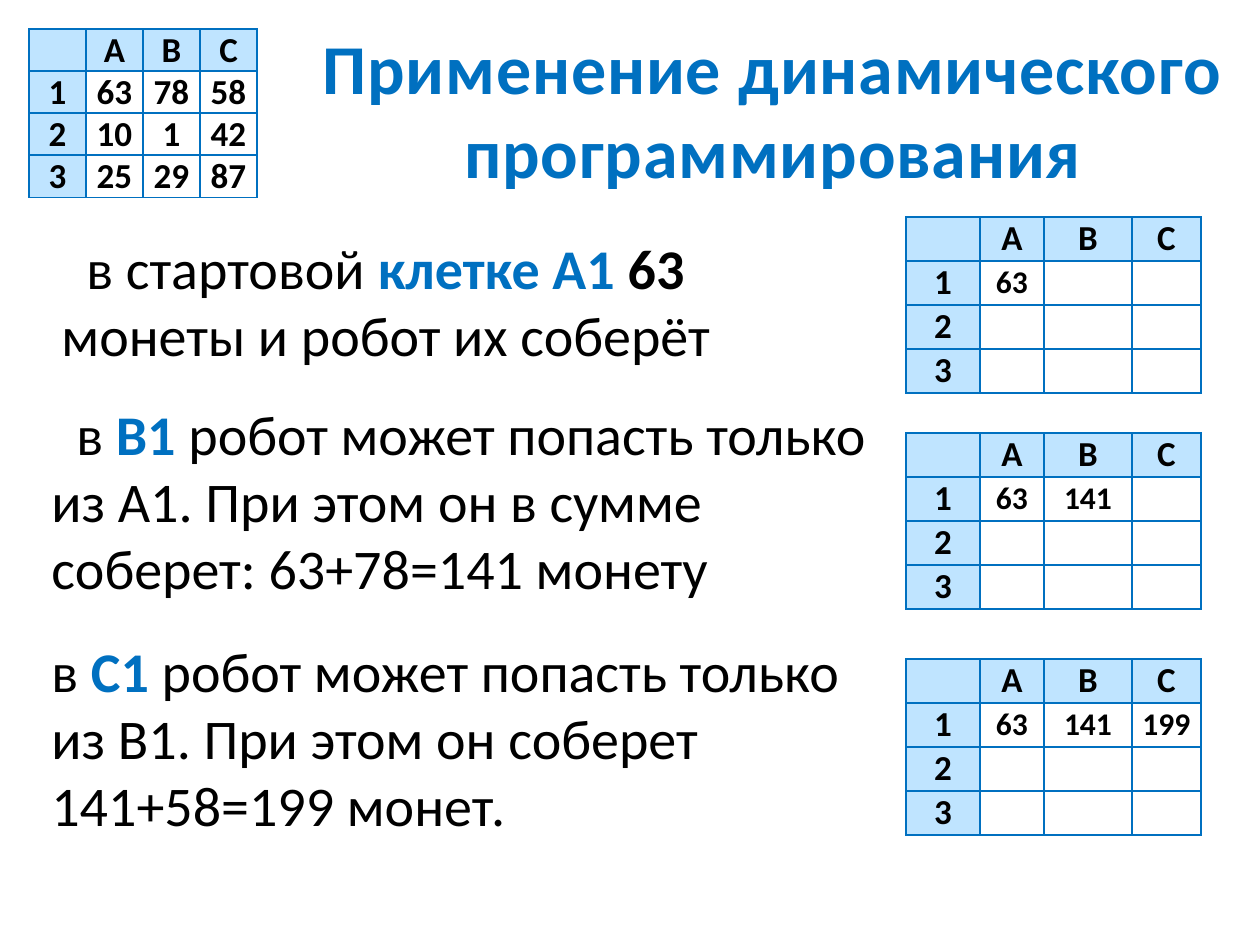
"""Build a slide on coin sums found by dynamic programming."""
from lxml import etree
from pptx import Presentation
from pptx.dml.color import RGBColor
from pptx.enum.text import MSO_ANCHOR, PP_ALIGN
from pptx.oxml.ns import qn
from pptx.util import Pt

MID = MSO_ANCHOR.MIDDLE
TOP = MSO_ANCHOR.TOP
CENTER = PP_ALIGN.CENTER
LEFT = PP_ALIGN.LEFT
SCALE = 914400 / 126
BLANK = 6
COLORS = {"blue": "0070C0", "pale": "BFE4FF", "black": "000000", "white": "FFFFFF"}
PLAIN = {"name": "Calibri", "size": Pt(32), "bold": False}
BOLD = {**PLAIN, "bold": True}
TITLE = {**BOLD, "size": Pt(40)}
HEAD = {**BOLD, "size": Pt(20)}
SUM = {**BOLD, "size": Pt(18)}
INSETS = {"margin_left": 9, "margin_right": 9, "margin_top": 0, "margin_bottom": 0}
SIDES = ("a:lnL", "a:lnR", "a:lnT", "a:lnB")

COINS = [["63", "78", "58"], ["10", "1", "42"], ["25", "29", "87"]]
SUMS = ["63", "141", "199"]
STEP_TOPS = [217, 433, 659]
STEP_COLS = [74, 64, 88, 69]
NOTES = [
    ((49, 227, 837, 158), 25, [
        ("в стартовой ", PLAIN, "black"), ("клетке А1 ", BOLD, "blue"),
        ("63 ", BOLD, "black"), ("монеты и робот их соберёт", PLAIN, "black")]),
    ((39, 393, 857, 227), 25, [
        ("в ", PLAIN, "black"), ("B1", BOLD, "blue"),
        (" робот может попасть только из А1. При этом он в сумме "
         "соберет: 63+78=141 монету", PLAIN, "black")]),
    ((39, 630, 837, 246), 0, [
        ("в ", PLAIN, "black"), ("C1 ", BOLD, "blue"),
        ("робот может попасть только из B1. При этом он соберет "
         "141+58=199 монет.", PLAIN, "black")]),
]


def px(num):
    """Turn pixels into EMU."""
    return round(num * SCALE)


def rgb(name):
    """Look up a named colour."""
    return RGBColor.from_string(COLORS[name])


def add_run(para, text, form, color):
    """Add a run of formatted text."""
    run = para.add_run()
    run.text = text
    for key, val in form.items():
        setattr(run.font, key, val)
    run.font.color.rgb = rgb(color)
    return run


def add_text(slide, box, runs, indent=0, align=LEFT, anchor=TOP):
    """Add a wrapped text box and return its paragraph."""
    frame = slide.shapes.add_textbox(*map(px, box)).text_frame
    frame.word_wrap = True
    frame.vertical_anchor = anchor
    para = frame.paragraphs[0]
    para.alignment = align
    para._p.get_or_add_pPr().set("indent", str(px(indent)))
    for text, form, color in runs:
        add_run(para, text, form, color)
    return para


def add_title(slide):
    """Add the spaced slide title."""
    para = add_text(slide, (286, 29, 974, 158),
                    [("Применение динамического программирования", TITLE, "blue")],
                    align=CENTER, anchor=MID)
    para.runs[0].font._element.set("spc", "50")


def add_edges(cell):
    """Draw the four borders of a cell."""
    props = cell._tc.get_or_add_tcPr()
    for side in SIDES:
        line = etree.SubElement(props, qn(side), w=str(Pt(1)))
        fill = etree.SubElement(line, qn("a:solidFill"))
        etree.SubElement(fill, qn("a:srgbClr"), val=COLORS["blue"])


def fill_cell(cell, text, form, back):
    """Format one cell and write its text."""
    for key, val in INSETS.items():
        setattr(cell, key, px(val))
    cell.vertical_anchor = MID
    add_edges(cell)
    cell.fill.solid()
    cell.fill.fore_color.rgb = rgb(back)
    para = cell.text_frame.paragraphs[0]
    para.alignment = CENTER
    if text:
        add_run(para, text, form, "black")


def add_grid(slide, left, top, cols, high, vals, form):
    """Add a table with lettered columns and numbered rows."""
    rows = [["", "A", "B", "C"]]
    rows += [[str(num), *row] for num, row in enumerate(vals, 1)]
    box = (left, top, sum(cols), high * len(rows))
    table = slide.shapes.add_table(len(rows), len(cols), *map(px, box)).table
    table.first_row = table.horz_banding = False
    for col, wide in zip(table.columns, cols):
        col.width = px(wide)
    for r, row in enumerate(rows):
        table.rows[r].height = px(high)
        for c, text in enumerate(row):
            head = r == 0 or c == 0
            fill_cell(table.cell(r, c), text, HEAD if head else form,
                      "pale" if head else "white")


def main():
    """Build and save the slide."""
    deck = Presentation()
    deck.slide_width, deck.slide_height = px(1260), px(945)
    slide = deck.slides.add_slide(deck.slide_layouts[BLANK])
    add_title(slide)
    for box, indent, runs in NOTES:
        add_text(slide, box, runs, indent)
    for step, top in enumerate(STEP_TOPS, 1):
        first = SUMS[:step] + [""] * (3 - step)
        add_grid(slide, 906, top, STEP_COLS, 44, [first, [""] * 3, [""] * 3], SUM)
    add_grid(slide, 29, 29, [57] * 4, 42, COINS, HEAD)
    deck.save("out.pptx")


if __name__ == "__main__":
    main()
